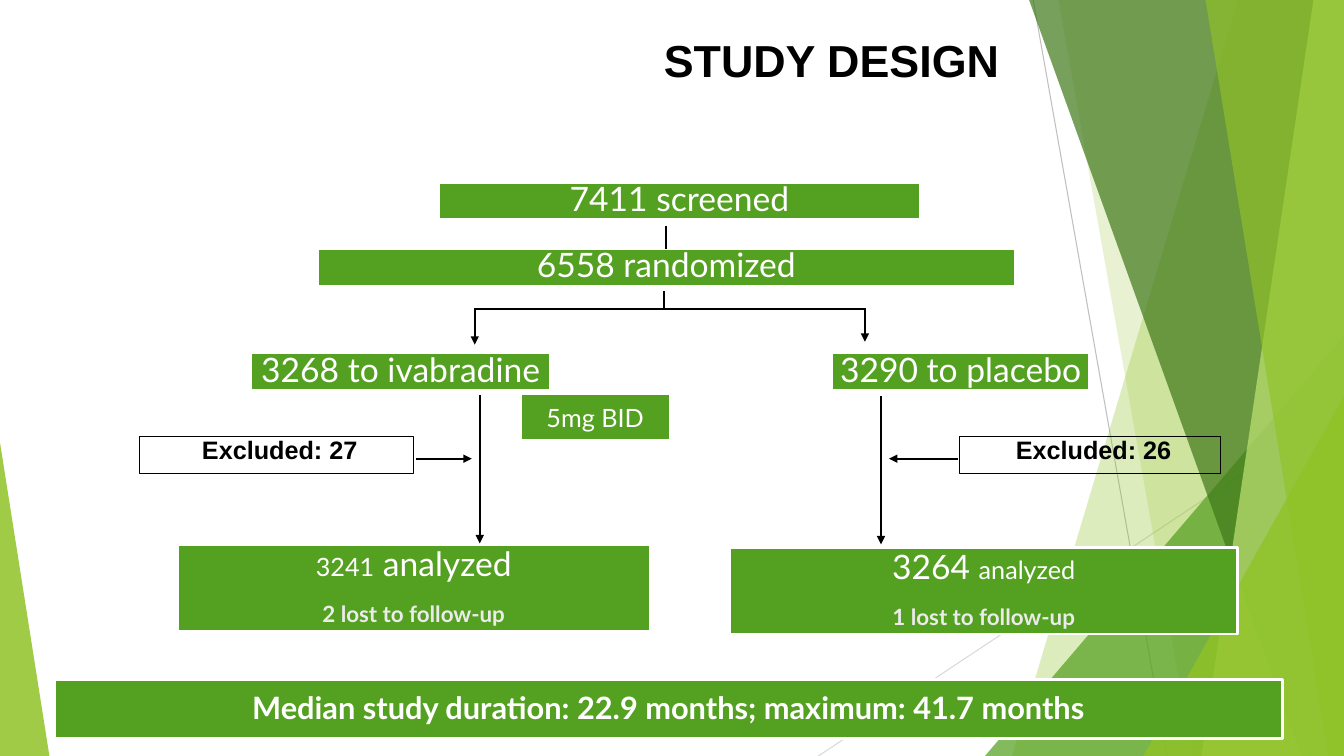
from dataclasses import dataclass
from typing import Optional

from lxml.etree import SubElement
from pptx import Presentation
from pptx.dml.color import RGBColor
from pptx.enum.shapes import MSO_CONNECTOR, MSO_SHAPE
from pptx.enum.text import MSO_ANCHOR, PP_ALIGN
from pptx.oxml.ns import qn
from pptx.util import Pt

WIDTH, HEIGHT = 960, 540
GREEN, LIME, WHITE, BLACK, PALE = "54A021", "90C226", "FFFFFF", "000000", "EBEBEB"


@dataclass
class Band:
    """Four-sided band that reaches the right edge of the slide."""
    top_x: float
    bottom_x: float
    color: str
    opacity: int


@dataclass
class Wedge:
    """Triangle standing on the bottom edge of the slide."""
    left: float
    top: float
    width: float
    apex: float
    color: str
    opacity: int


@dataclass
class Run:
    text: str
    size: float = 24
    color: str = WHITE
    bold: bool = False


@dataclass
class Box:
    left: float
    top: float
    width: float
    height: float
    paragraphs: list[list[Run]]
    fill: Optional[str] = GREEN
    line: Optional[str] = WHITE
    line_width: float = 2
    font: str = "Lato"
    anchor: MSO_ANCHOR = MSO_ANCHOR.MIDDLE
    line_spacing: float = 0.9
    left_inset: float = 0
    wrap: bool = True


@dataclass
class Link:
    x1: float
    y1: float
    x2: float
    y2: float
    arrow: bool = False
    color: str = BLACK
    width: float = 1.5
    end_box: Optional[str] = None


def rgb(color: str) -> RGBColor:
    return RGBColor.from_string(color)


def paint(shape, color: Optional[str], opacity: int = 100) -> None:
    shape.shadow.inherit = False
    if color is None:
        shape.fill.background()
        return
    shape.fill.solid()
    shape.fill.fore_color.rgb = rgb(color)
    if opacity < 100:
        color_element = shape.fill._xPr.find(qn("a:solidFill"))[0]
        SubElement(color_element, qn("a:alpha")).set("val", str(opacity * 1000))


def add_decoration(slide, part: Band | Wedge) -> None:
    if isinstance(part, Band):
        builder = slide.shapes.build_freeform(Pt(part.top_x), 0)
        corners = [(WIDTH, 0), (WIDTH, HEIGHT), (part.bottom_x, HEIGHT)]
        builder.add_line_segments([(Pt(x), Pt(y)) for x, y in corners])
        shape = builder.convert_to_shape()
    else:
        shape = slide.shapes.add_shape(
            MSO_SHAPE.ISOSCELES_TRIANGLE, Pt(part.left), Pt(part.top),
            Pt(part.width), Pt(HEIGHT - part.top))
        shape.adjustments[0] = part.apex
    paint(shape, part.color, part.opacity)
    shape.line.fill.background()


def write_text(shape, paragraphs: list[list[Run]], *, font: str, anchor: MSO_ANCHOR,
               line_spacing: float, left_inset: float, wrap: bool) -> None:
    frame = shape.text_frame
    frame.word_wrap = wrap
    frame.vertical_anchor = anchor
    frame.margin_left = Pt(left_inset)
    frame.margin_right = frame.margin_top = frame.margin_bottom = 0
    for index, runs in enumerate(paragraphs):
        paragraph = frame.add_paragraph() if index else frame.paragraphs[0]
        paragraph.alignment = PP_ALIGN.CENTER
        paragraph.line_spacing = line_spacing
        if index:
            paragraph.space_before = Pt(14)
        for item in runs:
            run = paragraph.add_run()
            run.text = item.text
            run.font.name = font
            run.font.size = Pt(item.size)
            run.font.bold = item.bold
            run.font.color.rgb = rgb(item.color)


def add_box(slide, box: Box):
    place = Pt(box.left), Pt(box.top), Pt(box.width), Pt(box.height)
    if box.fill is None and box.line is None:
        shape = slide.shapes.add_textbox(*place)
    else:
        shape = slide.shapes.add_shape(MSO_SHAPE.RECTANGLE, *place)
        paint(shape, box.fill)
        shape.line.color.rgb = rgb(box.line)
        shape.line.width = Pt(box.line_width)
    write_text(shape, box.paragraphs, font=box.font, anchor=box.anchor,
               line_spacing=box.line_spacing, left_inset=box.left_inset, wrap=box.wrap)
    return shape


def add_link(slide, link: Link, shapes: dict) -> None:
    connector = slide.shapes.add_connector(
        MSO_CONNECTOR.STRAIGHT, Pt(link.x1), Pt(link.y1), Pt(link.x2), Pt(link.y2))
    connector.line.color.rgb = rgb(link.color)
    connector.line.width = Pt(link.width)
    if link.arrow:
        SubElement(connector.line._get_or_add_ln(), qn("a:tailEnd")).set("type", "triangle")
    SubElement(connector._element.spPr, qn("a:effectLst"))
    if link.end_box:
        connector.end_connect(shapes[link.end_box], 0)


def excluded(left: float, width: float, text: str) -> Box:
    return Box(left, 311.8, width, 26.6, [[Run(text, 18, BLACK, True)]], fill=None,
               line=BLACK, line_width=0.75, font="Arial", anchor=MSO_ANCHOR.TOP,
               line_spacing=0.95, left_inset=5)


# Background ornament
HAIRLINES = [
    Link(738, 0, 833.8, HEIGHT, color="BFBFBF", width=0.75),
    Link(WIDTH, 290.2, 584.6, HEIGHT, color="D9D9D9", width=0.75),
]
DECORATIONS = [
    Band(884.2, 722.9, LIME, 30),
    Band(756, 851.8, LIME, 20),
    Wedge(703.6, 239.8, 256.4, 1, GREEN, 72),
    Band(735.1, 929.5, "3F7819", 70),
    Band(938.2, 858.2, "C0E474", 70),
    Band(861.1, 949, LIME, 65),
    Wedge(816.6, 283, 143.4, 1, LIME, 80),
    Wedge(0, 316.1, 35.3, 0, LIME, 85),
]

# Flow chart boxes
BOXES = {
    "title": Box(243.4, 25.9, 701.3, 37.4, [[Run("STUDY DESIGN", 32, BLACK, True)]],
                 fill=None, line=None, font="Arial", line_spacing=0.95),
    "duration": Box(38.9, 485.5, 877, 42.2, [[Run(
        "Median study duration: 22.9 months; maximum: 41.7 months", 22, bold=True)]], wrap=False),
    "randomized": Box(226.8, 177.8, 498.2, 26.6, [[Run("6558 randomized")]],
                      anchor=MSO_ANCHOR.TOP),
    "ivabradine": Box(179.3, 252, 213.8, 26.6, [[Run("3268 to ivabradine")]], wrap=False),
    "placebo": Box(594, 252, 184.3, 26.6, [[Run("3290 to placebo")]], wrap=False),
    "placebo analyzed": Box(521.3, 391, 362.9, 61.9, [
        [Run("3264 "), Run("analyzed", 18)], [Run("1 lost to follow-up", 16, PALE, True)]]),
    "ivabradine analyzed": Box(126.7, 388.8, 337.7, 61.9, [
        [Run("3241", 18), Run(" analyzed")], [Run("2 lost to follow-up", 16, PALE, True)]]),
    "screened": Box(313.2, 130.3, 344.2, 26.6, [[Run("7411 screened")]], anchor=MSO_ANCHOR.TOP),
    "ivabradine excluded": excluded(99.4, 195.8, "Excluded: 27"),
    "placebo excluded": excluded(685.4, 186.5, "Excluded: 26"),
    "dose": Box(371.5, 281.5, 107.3, 33.1, [[Run("5mg BID", 18)]], line_spacing=1),
}

# Flow chart lines and arrows
LINKS = [
    Link(475.9, 161.3, 475.9, 177.8, end_box="randomized"),
    Link(474.5, 208.1, 474.5, 221.8),
    Link(338.4, 221, 486.7, 221),
    Link(470.2, 221, 618.5, 221),
    Link(339.1, 221, 339.1, 246.2, arrow=True),
    Link(617.8, 221, 617.8, 244.1, arrow=True),
    Link(342.7, 282.2, 342.7, 388.1, arrow=True),
    Link(629.3, 283, 629.3, 388.8, arrow=True),
    Link(297.4, 327.6, 337, 327.6, arrow=True),
    Link(684, 327.6, 635, 327.6, arrow=True),
]


def main() -> None:
    presentation = Presentation()
    presentation.slide_width, presentation.slide_height = Pt(WIDTH), Pt(HEIGHT)
    slide = presentation.slides.add_slide(presentation.slide_layouts[6])
    for hairline in HAIRLINES:
        add_link(slide, hairline, {})
    for part in DECORATIONS:
        add_decoration(slide, part)
    shapes = {name: add_box(slide, box) for name, box in BOXES.items()}
    for link in LINKS:
        add_link(slide, link, shapes)
    presentation.save("out.pptx")


if __name__ == "__main__":
    main()
